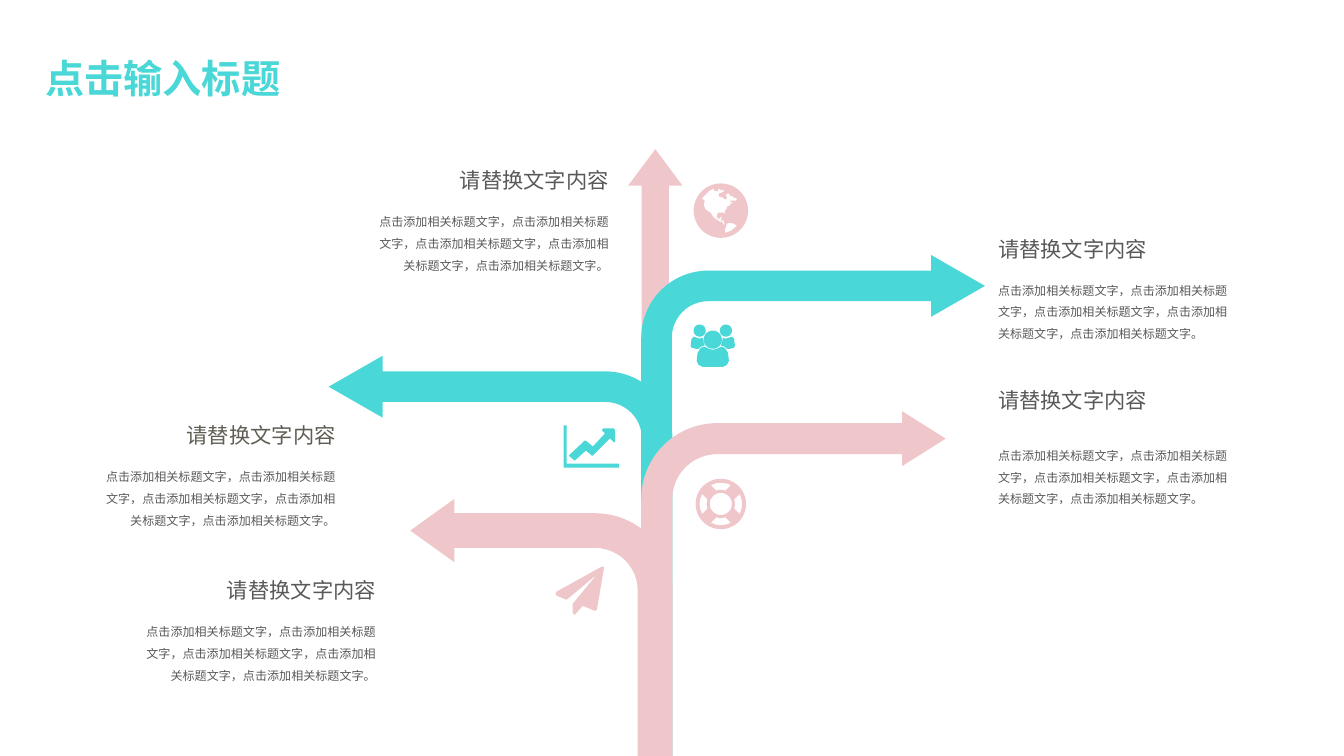
import math

import lxml.etree
import pptx
import pptx.dml.color
import pptx.enum.shapes
import pptx.enum.text
import pptx.oxml.ns
import pptx.util

COLORS = {"teal": "49D8D7", "pink": "EFC7CB", "gray": "595959", "olive": "605E54"}
FONT = "Lato"
HEADING = "请替换文字内容"
CLAUSE = "点击添加相关标题文字"
BODY = "，".join([CLAUSE] * 5) + "。"
Inches = pptx.util.Inches
SHAPES = pptx.enum.shapes.MSO_SHAPE
ALIGN = pptx.enum.text.PP_ALIGN


def arc(x, y, radius, start=0, end=360, steps=48):
    angles = [math.radians(start + (end - start) * i / steps) for i in range(steps + 1)]
    return [(x + radius * math.cos(a), y + radius * math.sin(a)) for a in angles]


def mirror(points, axis):
    return [(2 * axis - x, y) for x, y in reversed(points)]


class TreeSlide:
    """Draws the elements of one slide in a shared style."""

    def __init__(self, page):
        self.page = page

    def paint(self, shape, color):
        shape.shadow.inherit = False
        shape.fill.solid()
        shape.fill.fore_color.rgb = pptx.dml.color.RGBColor.from_string(COLORS[color])
        shape.line.fill.background()

    def span(self, para, text, size, color, bold=False):
        span = para.add_run()
        span.text = text
        font = span.font
        font.name, font.size, font.bold = FONT, pptx.util.Pt(size), bold
        font.color.rgb = pptx.dml.color.RGBColor.from_string(COLORS[color])
        east = lxml.etree.SubElement(span._r.get_or_add_rPr(), pptx.oxml.ns.qn("a:ea"))
        east.set("typeface", FONT)

    def title(self, text, left, top, width, height):
        box = self.page.shapes.title
        box.left, box.top, box.width, box.height = map(Inches, (left, top, width, height))
        frame = box.text_frame
        frame.word_wrap = False
        frame.auto_size = pptx.enum.text.MSO_AUTO_SIZE.NONE
        frame.vertical_anchor = pptx.enum.text.MSO_ANCHOR.TOP
        para = frame.paragraphs[0]
        para.alignment = ALIGN.LEFT
        self.span(para, text, 28, "teal", True)

    def arrow(self, kind, left, top, width, color, adjustments, flip=False):
        shape = self.page.shapes.add_shape(
            kind, Inches(left), Inches(top), Inches(width), Inches(7.5 - top))
        for index, value in enumerate(adjustments):
            shape.adjustments[index] = value
        if flip:
            shape._element.spPr.xfrm.set("flipH", "1")
        self.paint(shape, color)

    def caption(self, left, top, width, height, align, color="gray", gap=10.5):
        box = self.page.shapes.add_textbox(*map(Inches, (left, top, width, height)))
        frame = box.text_frame
        frame.word_wrap = True
        heading = frame.paragraphs[0]
        heading.alignment = align
        heading.space_after = pptx.util.Pt(gap)
        self.span(heading, HEADING, 15.2, color)
        body = frame.add_paragraph()
        body.alignment = align
        body.line_spacing = 1.5
        self.span(body, BODY, 8.6, "gray")

    def icon(self, color, *outlines):
        builder = None
        for outline in outlines:
            points = [(Inches(x), Inches(y)) for x, y in outline]
            if builder is None:
                builder = self.page.shapes.build_freeform(*points[0])
            else:
                builder.move_to(*points[0])
            builder.add_line_segments(points[1:], close=True)
        self.paint(builder.convert_to_shape(), color)


def draw_icons(slide):
    slide.icon("pink", [
        (5.99, 5.64), (5.92, 6.05), (5.9, 6.06), (5.78, 6.01), (5.71, 6.09), (5.7, 6.1),
        (5.68, 6.08), (5.68, 5.99), (5.92, 5.7), (5.62, 5.95), (5.52, 5.91), (5.51, 5.89),
        (5.52, 5.87), (5.97, 5.62), (5.99, 5.62)])

    america = [
        (7.24, 2.01), (7.25, 1.99), (7.3, 1.99), (7.31, 1.97), (7.28, 1.96), (7.26, 1.94),
        (7.25, 1.95), (7.23, 1.92), (7.21, 1.92), (7.2, 1.94), (7.21, 1.96), (7.2, 1.98),
        (7.18, 1.97), (7.17, 1.96), (7.13, 1.95), (7.13, 1.92), (7.16, 1.91), (7.18, 1.9),
        (7.18, 1.88), (7.16, 1.89), (7.13, 1.87), (7.12, 1.9), (7.08, 1.89), (7.08, 1.87),
        (7.04, 1.89), (6.96, 1.97), (6.99, 1.99), (6.98, 2.04), (7, 2.08), (7.02, 2.09),
        (7.05, 2.14), (7.03, 2.1), (7.04, 2.1), (7.08, 2.16), (7.11, 2.18), (7.14, 2.2),
        (7.16, 2.2), (7.18, 2.23), (7.2, 2.22), (7.18, 2.22), (7.18, 2.19), (7.15, 2.19),
        (7.16, 2.15), (7.15, 2.15), (7.14, 2.17), (7.12, 2.17), (7.11, 2.15), (7.12, 2.11),
        (7.18, 2.11), (7.19, 2.13), (7.19, 2.09), (7.21, 2.07), (7.21, 2.05), (7.24, 2.04),
        (7.25, 2.02), (7.27, 2.01), (7.26, 2)]
    antarctica = [
        (7.31, 2.24), (7.28, 2.22), (7.24, 2.21), (7.21, 2.22), (7.2, 2.25), (7.19, 2.28),
        (7.19, 2.31), (7.25, 2.29)]
    slide.icon("pink", arc(7.15, 2.09, 0.27), america, antarctica)

    axes = [(6.14, 4.64), (5.59, 4.64), (5.59, 4.22), (5.62, 4.22), (5.62, 4.6), (6.14, 4.6)]
    trend = [
        (6.1, 4.38), (6.09, 4.39), (6.05, 4.35), (5.88, 4.52), (5.87, 4.52), (5.81, 4.47),
        (5.7, 4.57), (5.64, 4.52), (5.8, 4.37), (5.81, 4.37), (5.88, 4.43), (6, 4.3),
        (5.97, 4.27), (5.98, 4.25), (6.09, 4.25), (6.1, 4.27)]
    slide.icon("teal", axes, trend)

    x, y = 7.15, 5
    gaps = [arc(x, y, 0.21, turn - 28, turn + 28, 12) + arc(x, y, 0.14, turn + 19, turn - 19, 12)
            for turn in range(0, 360, 90)]
    slide.icon("pink", arc(x, y, 0.25), arc(x, y, 0.11), *gaps)

    axis = 7.07
    half_torso = [
        (axis, 3.47), (7.03, 3.46), (6.99, 3.44), (6.95, 3.45), (6.92, 3.5), (6.91, 3.58),
        (6.93, 3.62), (6.97, 3.64)]
    shoulder = [
        (6.93, 3.46), (6.9, 3.46), (6.86, 3.45), (6.85, 3.43), (6.86, 3.36), (6.88, 3.34),
        (6.94, 3.36), (6.97, 3.35), (6.98, 3.4), (6.99, 3.43), (6.95, 3.44)]
    head = arc(6.94, 3.28, 0.06)
    slide.icon("teal", half_torso + mirror(half_torso, axis), arc(axis, 3.37, 0.09),
               shoulder, mirror(shoulder, axis), head, mirror(head, axis))


def main():
    deck = pptx.Presentation()
    deck.slide_width, deck.slide_height = Inches(13.33), Inches(7.5)
    slide = TreeSlide(deck.slides.add_slide(deck.slide_layouts[5]))
    slide.title("点击输入标题", 0.35, 0.49, 2.56, 0.57)

    bent = SHAPES.BENT_ARROW
    long_bend = (0.089, 0.09, 0.157, 0.195)
    slide.arrow(SHAPES.UP_ARROW, 6.23, 1.48, 0.54, "pink", (0.5, 0.671))
    slide.arrow(bent, 6.36, 2.53, 3.41, "teal", long_bend)
    slide.arrow(bent, 3.26, 3.53, 3.41, "teal", long_bend, flip=True)
    slide.arrow(bent, 6.36, 4.08, 3.02, "pink", (0.102, 0.09, 0.143, 0.249))
    slide.arrow(bent, 4.07, 4.95, 2.6, "pink", (0.135, 0.123, 0.171, 0.301), flip=True)

    slide.caption(1.32, 5.68, 2.51, 1.12, ALIGN.RIGHT)
    slide.caption(0.95, 4.14, 2.48, 1.29, ALIGN.RIGHT, "olive")
    slide.caption(9.8, 3.79, 2.48, 1.43, ALIGN.LEFT, gap=20.5)
    slide.caption(3.66, 1.61, 2.48, 1.29, ALIGN.RIGHT)
    slide.caption(9.8, 2.29, 2.48, 1.29, ALIGN.LEFT)
    draw_icons(slide)
    deck.save("out.pptx")


if __name__ == "__main__":
    main()
